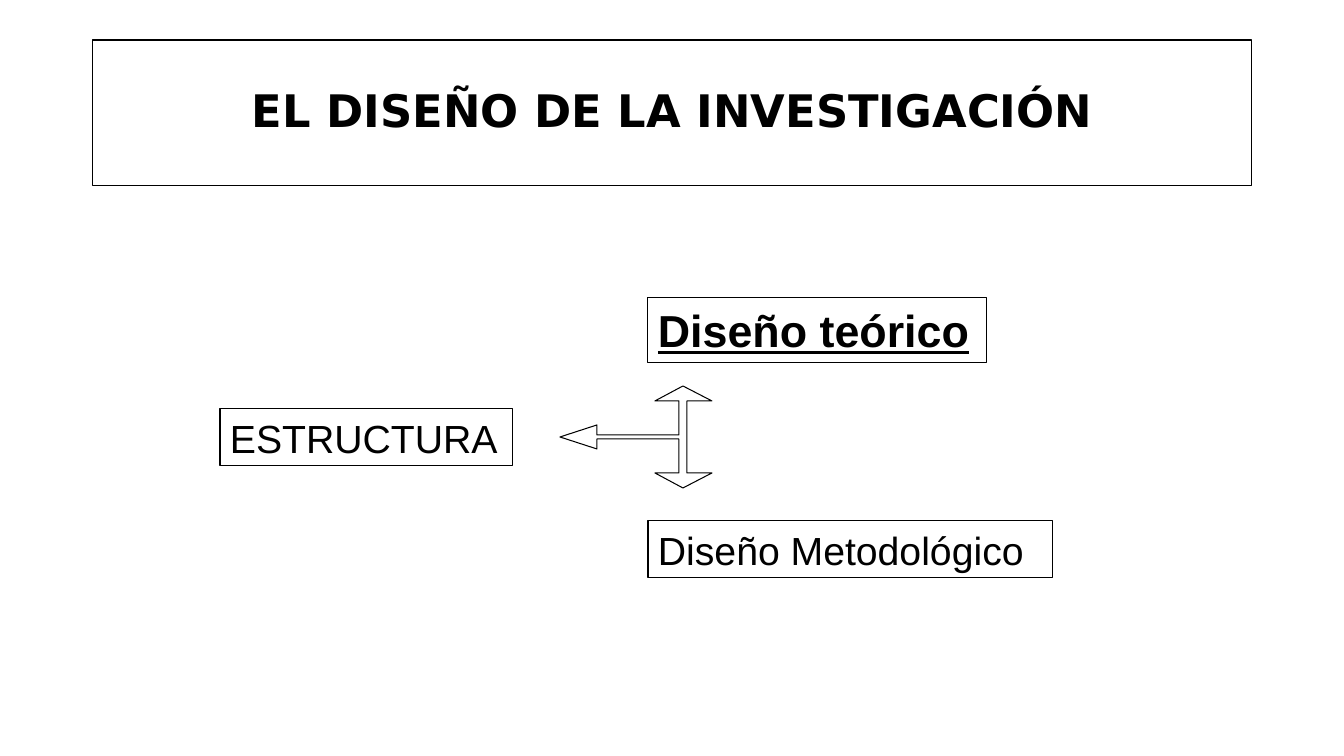
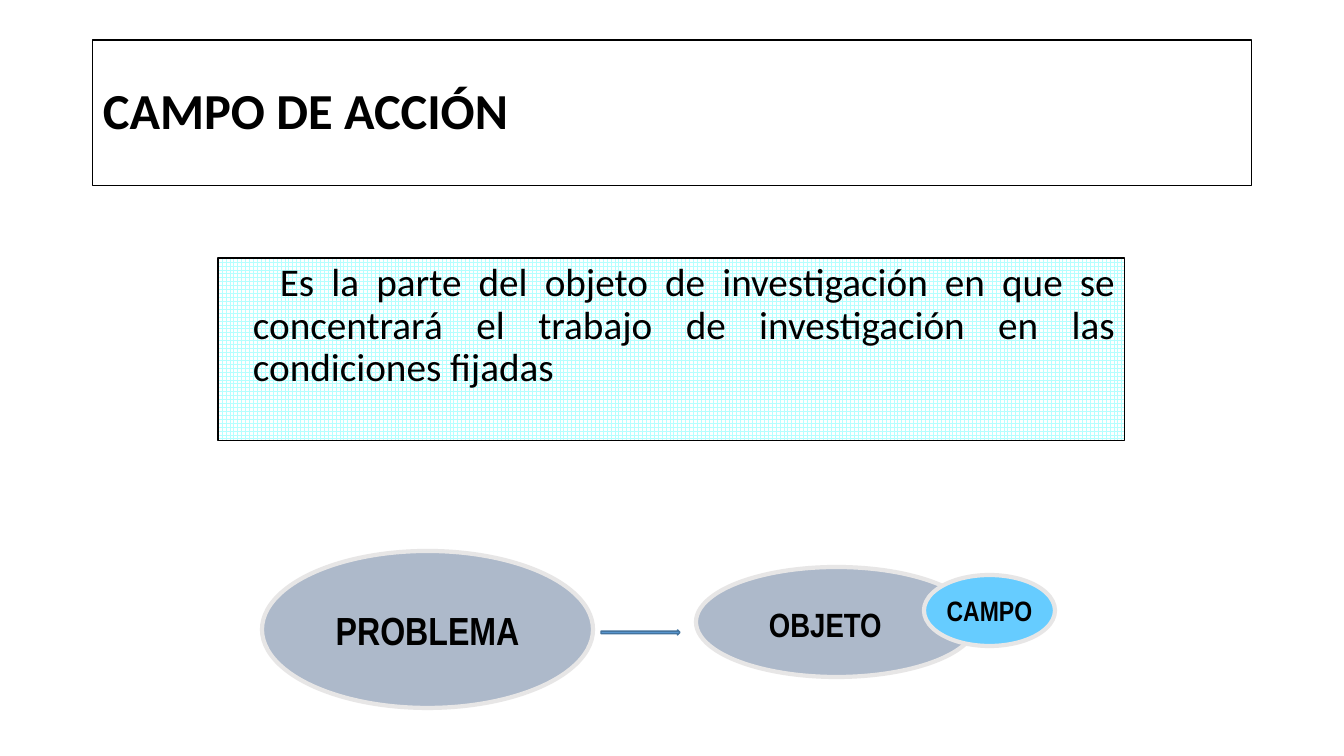
from pptx import Presentation
from pptx.dml.color import RGBColor
from pptx.enum.dml import MSO_PATTERN
from pptx.enum.shapes import MSO_SHAPE as SHAPE
from pptx.enum.text import MSO_ANCHOR as ANCHOR, PP_ALIGN as ALIGN
from pptx.util import Pt

PX = 9071.43  # EMU per px, 100.8 px to the inch
BLACK, WHITE, GRID = "000000", "FFFFFF", "B5FFFF"
SLATE, SKY, SILVER = "ADB9CA", "66CCFF", "E7E6E6"
ARROW_BLUE, ARROW_EDGE = "5B9BD5", "43739E"

TITLE_BOX = (93, 40, 1159, 146)
DESIGN_TITLE = "EL DISEÑO DE LA INVESTIGACIÓN"
DESIGN_PARTS = [
    ("ESTRUCTURA", (220, 409, 293, 57), dict(size=28)),
    ("Diseño teórico", (648, 298, 339, 65), dict(size=32, bold=True, underline=True)),
    ("Diseño Metodológico", (648, 521, 405, 57), dict(size=28)),
]
# Three-way arrow: its tip, then x and distance from the axis for one half
ARROW_TIP = (560, 437)
ARROW_HALF = [(597, 12), (597, 2), (679, 2), (679, 36),
              (655, 36), (683, 51), (712, 36), (687, 36)]

FIELD_TITLE = "CAMPO DE ACCIÓN"
DEFINITION = ("Es la parte del objeto de investigación en que se concentrará "
              "el trabajo de investigación en las condiciones fijadas")
DEFINITION_BOX = (218, 258, 907, 183)
DEFINITION_MARGIN, DEFINITION_INDENT = 25, 27
OVALS = [
    ("PROBLEMA", (262, 551, 331, 157), SLATE, 28),
    ("", (696, 567, 281, 110), SLATE, 24),
    ("CAMPO", (924, 575, 131, 71), SKY, 20),
]
OBJECT_LABEL = ("OBJETO", (759, 599, 135, 51))
LINK_ARROW = (601, 630, 79, 5)


def px(length):
    return round(length * PX)


def color(value):
    return RGBColor.from_string(value)


def style(shape, fill=None, line=BLACK, width=0.75):
    shape.shadow.inherit = False
    if fill:
        shape.fill.solid()
        shape.fill.fore_color.rgb = color(fill)
    else:
        shape.fill.background()
    shape.line.color.rgb = color(line)
    shape.line.width = Pt(width)
    return shape


def add_preset(slide, kind, box, **look):
    return style(slide.shapes.add_shape(kind, *map(px, box)), **look)


def write(shape, text, size=28, font="Arial", bold=False, underline=False,
          align=ALIGN.LEFT, anchor=ANCHOR.TOP, spacing=1.0, wrap=True):
    frame = shape.text_frame
    frame.word_wrap = wrap
    frame.vertical_anchor = anchor
    paragraph = frame.paragraphs[0]
    paragraph.alignment = align
    paragraph.line_spacing = spacing
    run = paragraph.add_run()
    run.text = text
    run.font.name, run.font.size = font, Pt(size)
    run.font.bold, run.font.underline = bold, underline
    run.font.color.rgb = color(BLACK)
    return paragraph


def add_titled_slide(deck, title, **text_format):
    slide = deck.slides.add_slide(deck.slide_layouts[6])
    box = add_preset(slide, SHAPE.RECTANGLE, TITLE_BOX)
    write(box, title, bold=True, anchor=ANCHOR.MIDDLE, spacing=0.9, **text_format)
    return slide


def add_three_way_arrow(slide):
    """Mirror the half outline about the horizontal axis through the tip."""
    axis = ARROW_TIP[1]
    lower = [(x, axis + offset) for x, offset in ARROW_HALF]
    upper = [(x, axis - offset) for x, offset in reversed(ARROW_HALF)]
    outline = slide.shapes.build_freeform(*ARROW_TIP, scale=PX)
    outline.add_line_segments(lower + upper, close=True)
    style(outline.convert_to_shape())


def build_design(deck):
    slide = add_titled_slide(deck, DESIGN_TITLE, size=32, font="DejaVu Sans",
                             align=ALIGN.CENTER)
    for text, box, text_format in DESIGN_PARTS:
        write(add_preset(slide, SHAPE.RECTANGLE, box), text, **text_format)
    add_three_way_arrow(slide)


def build_field(deck):
    slide = add_titled_slide(deck, FIELD_TITLE, size=36, font="Calibri")

    definition = add_preset(slide, SHAPE.RECTANGLE, DEFINITION_BOX)
    definition.fill.patterned()
    definition.fill.pattern = MSO_PATTERN.LARGE_GRID
    definition.fill.fore_color.rgb = color(GRID)
    definition.fill.back_color.rgb = color(WHITE)
    paragraph = write(definition, DEFINITION, font="Calibri",
                      align=ALIGN.JUSTIFY, spacing=0.9)
    properties = paragraph._p.get_or_add_pPr()
    properties.set("marL", str(px(DEFINITION_MARGIN)))
    properties.set("indent", str(px(DEFINITION_INDENT)))

    label_format = dict(font="Arial Narrow", bold=True, wrap=False)
    for text, box, fill, size in OVALS:
        oval = add_preset(slide, SHAPE.OVAL, box, fill=fill, line=SILVER, width=3)
        if text:
            write(oval, text, size=size, align=ALIGN.CENTER,
                  anchor=ANCHOR.MIDDLE, **label_format)
    text, box = OBJECT_LABEL
    write(slide.shapes.add_textbox(*map(px, box)), text, size=24, **label_format)
    add_preset(slide, SHAPE.RIGHT_ARROW, LINK_ARROW,
               fill=ARROW_BLUE, line=ARROW_EDGE, width=1)


def main():
    deck = Presentation()
    deck.slide_width, deck.slide_height = px(1344), px(756)
    build_design(deck)
    build_field(deck)
    deck.save("out.pptx")


if __name__ == "__main__":
    main()
